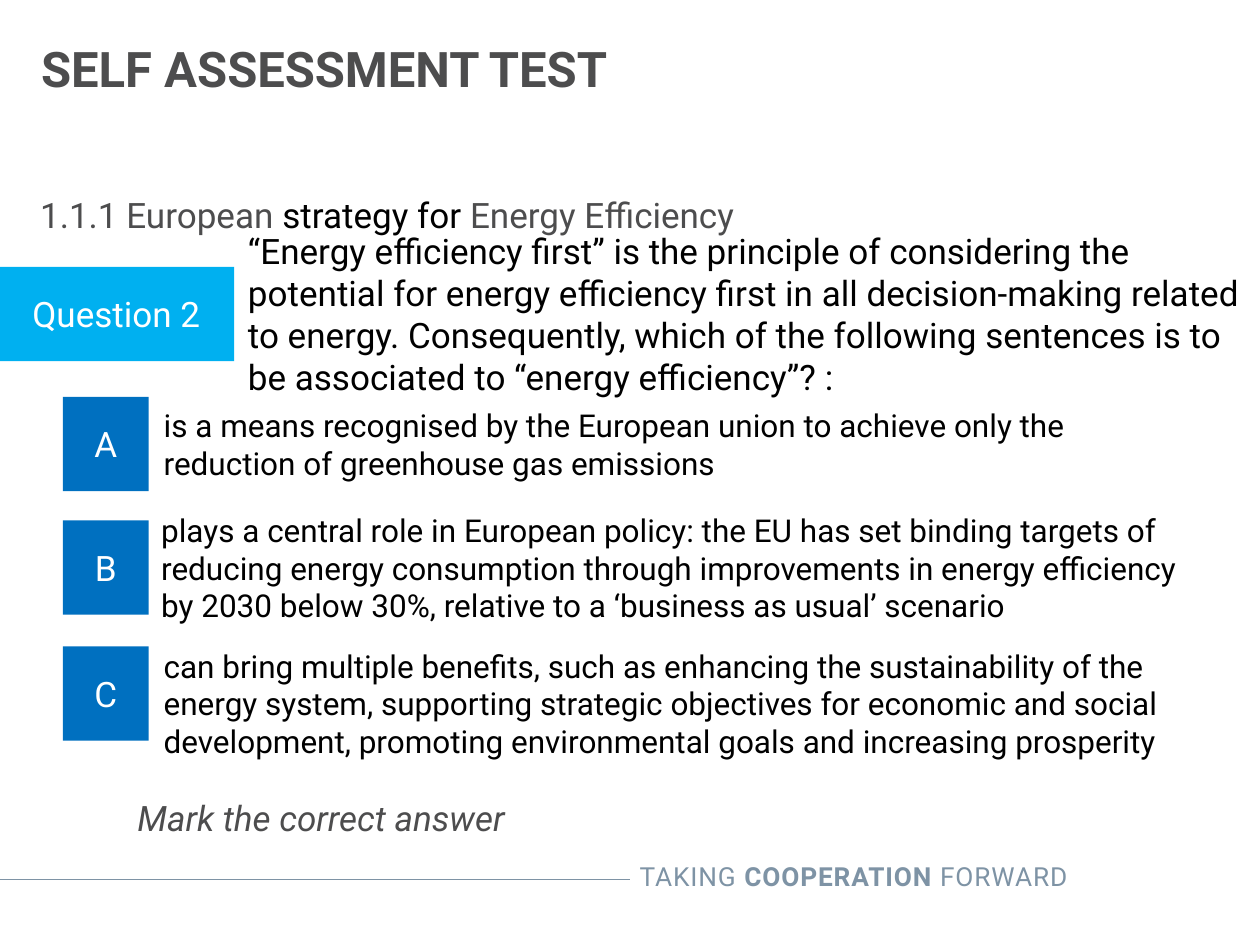
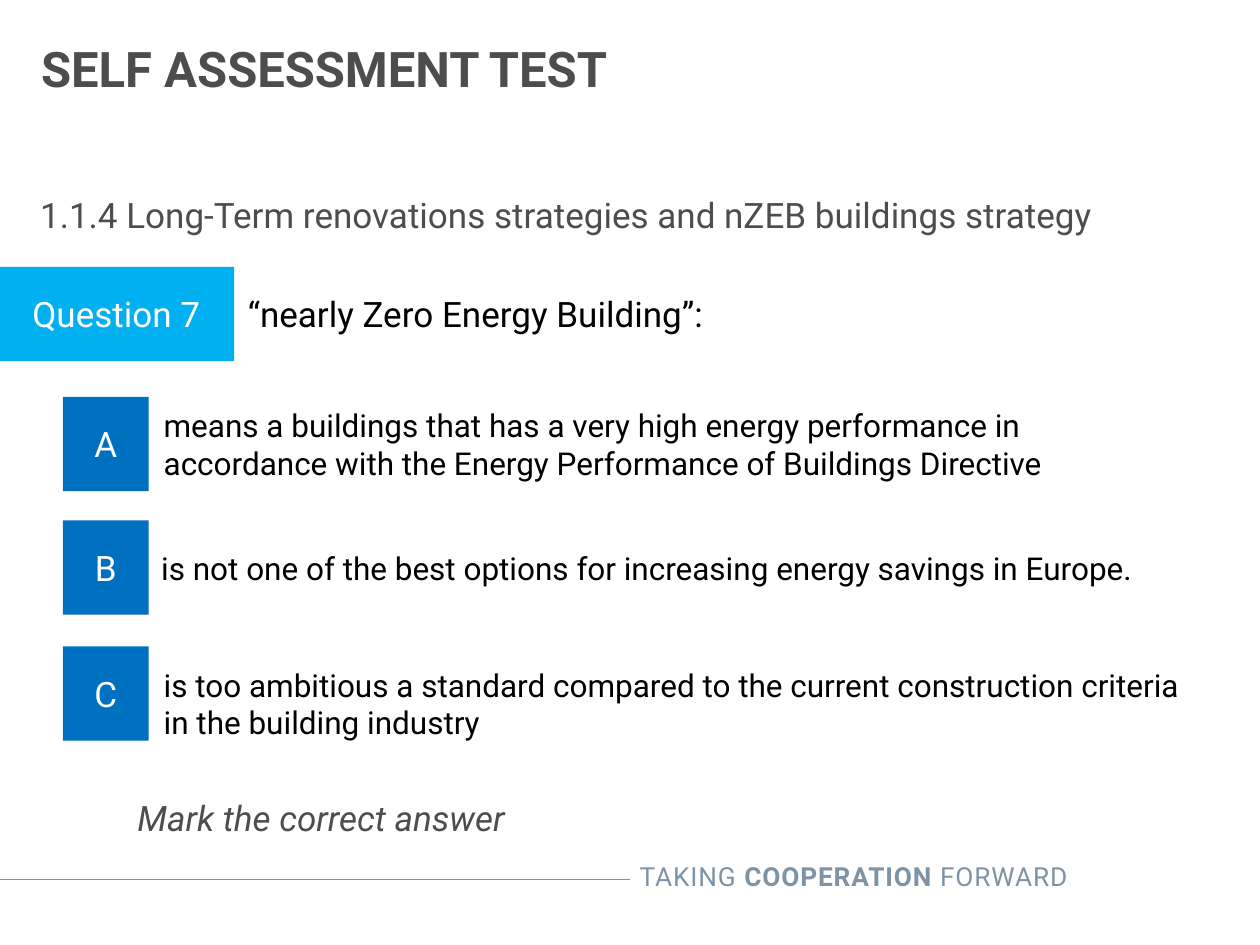
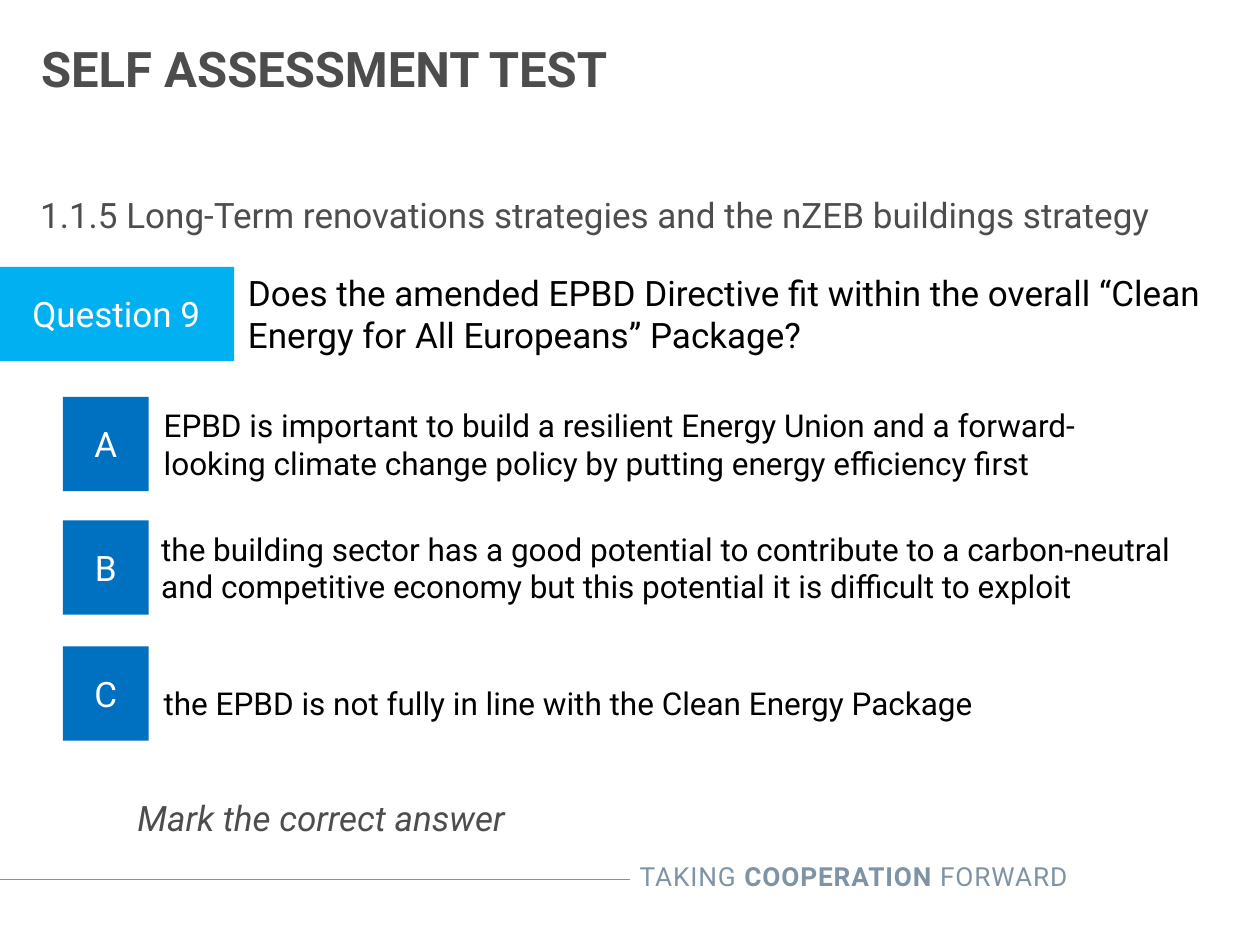
from dataclasses import dataclass
from typing import Any, Optional

import pptx
import pptx.dml.color
import pptx.enum.shapes
import pptx.enum.text
import pptx.oxml
import pptx.oxml.ns
import pptx.util
from pptx.dml.color import RGBColor
from pptx.util import Cm

ANCHOR = pptx.enum.text.MSO_ANCHOR
ALIGN = pptx.enum.text.PP_ALIGN

FONT = "Roboto"
BLACK = RGBColor(0x00, 0x00, 0x00)
WHITE = RGBColor(0xFF, 0xFF, 0xFF)
CHARCOAL = RGBColor(0x4D, 0x4D, 0x4E)
SLATE = RGBColor(0x7E, 0x93, 0xA5)
SKY = RGBColor(0x00, 0xB0, 0xF0)
BLUE = RGBColor(0x00, 0x70, 0xC0)


@dataclass(frozen=True)
class Area:
    left: float
    top: float
    width: float
    height: float = 1.9

    def lengths(self) -> tuple[Cm, Cm, Cm, Cm]:
        return Cm(self.left), Cm(self.top), Cm(self.width), Cm(self.height)


@dataclass(frozen=True)
class Words:
    text: str
    size: float = 20
    color: RGBColor = BLACK
    bold: bool = False
    italic: bool = False
    spacing: float = 0


@dataclass(frozen=True)
class Option:
    letter: str
    badge: Area
    answer: Area


@dataclass(frozen=True)
class Question:
    number: int
    topic: list[Words]
    wording: str
    answers: list[str]


EDGE = -0.03
TITLE = Area(EDGE, 0.41, 18.31)
TOPIC = Area(0.81, 3.91, 23.77, 0.86)
BANNER = Area(EDGE, 5.38, 4.75)
WORDING = Area(4.75, 5.38, 20.7)
INSTRUCTION = Area(2.77, 16.05, 15, 0.86)
SLOGAN = Area(9.86, 17.22, 11.91, 0.89)
FOOTER_RULE_END = 12.7
FOOTER_RULE_TOP = 17.73

OPTIONS = [
    Option("A", Area(1.27, 8, 1.73), Area(3.05, 8, 20.7)),
    Option("B", Area(1.27, 10.49, 1.73), Area(3, 10.49, 21.62)),
    Option("C", Area(1.27, 13.03, 1.73), Area(3.05, 13.23, 21.56)),
]

QUESTIONS = [
    Question(
        2,
        [
            Words("1.1.1 European ", color=CHARCOAL),
            Words("strategy for "),
            Words("Energy Efficiency", color=CHARCOAL),
        ],
        "“Energy efficiency first” is the principle of considering the potential for energy "
        "efficiency first in all decision-making related to energy. Consequently, which of the "
        "following sentences is to be associated to “energy efficiency”? :",
        [
            "is a means recognised by the European union to achieve only the reduction of "
            "greenhouse gas emissions",
            "plays a central role in European policy: the EU has set binding targets of reducing "
            "energy consumption through improvements in energy efficiency by 2030 below 30%, "
            "relative to a ‘business as usual’ scenario",
            "can bring multiple benefits, such as enhancing the sustainability of the energy "
            "system, supporting strategic objectives for economic and social development, "
            "promoting environmental goals and increasing prosperity",
        ],
    ),
    Question(
        7,
        [Words("1.1.4 Long-Term renovations strategies and nZEB buildings strategy", color=CHARCOAL)],
        "“nearly Zero Energy Building”:",
        [
            "means a buildings that has a very high energy performance in accordance with the "
            "Energy Performance of Buildings Directive",
            "is not one of the best options for increasing energy savings in Europe.",
            "is too ambitious a standard compared to the current construction criteria in the "
            "building industry",
        ],
    ),
    Question(
        9,
        [Words("1.1.5 Long-Term renovations strategies and the nZEB buildings strategy", color=CHARCOAL)],
        "Does the amended EPBD Directive fit within the overall “Clean Energy for All Europeans” "
        "Package?",
        [
            "EPBD is important to build a resilient Energy Union and a forward-looking climate "
            "change policy by putting energy efficiency first",
            "the building sector has a good potential to contribute to a carbon-neutral and "
            "competitive economy but this potential it is difficult to exploit",
            "the EPBD is not fully in line with the Clean Energy Package",
        ],
    ),
]


def write(frame: Any, words: list[Words], anchor: Any, align: Any) -> None:
    frame.word_wrap = True
    frame.vertical_anchor = anchor
    paragraph = frame.paragraphs[0]
    paragraph.alignment = align
    for part in words:
        run = paragraph.add_run()
        run.text = part.text
        run.font.name = FONT
        run.font.size = pptx.util.Pt(part.size)
        run.font.bold = part.bold
        run.font.italic = part.italic
        run.font.color.rgb = part.color
        if part.spacing:
            run.font._element.set("spc", str(round(part.spacing * 100)))


def add_text(
    slide: Any,
    area: Area,
    words: list[Words],
    anchor: Any = ANCHOR.MIDDLE,
    align: Any = ALIGN.LEFT,
    left_inset: Optional[float] = None,
    flush: bool = False,
) -> None:
    frame = slide.shapes.add_textbox(*area.lengths()).text_frame
    if flush:
        frame.margin_left = frame.margin_top = frame.margin_right = frame.margin_bottom = 0
    if left_inset is not None:
        frame.margin_left = Cm(left_inset)
    write(frame, words, anchor, align)


def add_block(slide: Any, area: Area, fill: RGBColor, label: str) -> None:
    block = slide.shapes.add_shape(pptx.enum.shapes.MSO_SHAPE.RECTANGLE, *area.lengths())
    block.shadow.inherit = False
    block.fill.solid()
    block.fill.fore_color.rgb = fill
    block.line.fill.background()
    write(block.text_frame, [Words(label, color=WHITE)], ANCHOR.MIDDLE, ALIGN.CENTER)


def add_footer(slide: Any) -> None:
    rule = slide.shapes.add_connector(
        pptx.enum.shapes.MSO_CONNECTOR.STRAIGHT,
        Cm(EDGE), Cm(FOOTER_RULE_TOP), Cm(FOOTER_RULE_END), Cm(FOOTER_RULE_TOP),
    )
    rule.line.color.rgb = SLATE
    rule.line.width = pptx.util.Pt(0.75)
    properties = rule._element.spPr
    properties.append(properties.makeelement(pptx.oxml.ns.qn("a:effectLst"), {}))
    slogan = [
        Words(text, 15, SLATE, bold, spacing=0.5)
        for text, bold in (("TAKING ", False), ("COOPERATION", True), (" FORWARD", False))
    ]
    add_text(slide, SLOGAN, slogan, ANCHOR.TOP, ALIGN.RIGHT)


def add_question(slide: Any, question: Question) -> None:
    add_footer(slide)
    add_text(slide, TITLE, [Words("SELF ASSESSMENT TEST", 28, CHARCOAL, bold=True)], left_inset=0.86)
    add_text(slide, TOPIC, question.topic, ANCHOR.TOP, flush=True)
    add_block(slide, BANNER, SKY, f"Question {question.number}")
    add_text(slide, WORDING, [Words(question.wording)])
    for option, answer in zip(OPTIONS, question.answers):
        add_block(slide, option.badge, BLUE, option.letter)
        add_text(slide, option.answer, [Words(answer, 18)])
    instruction = Words("Mark the correct answer", color=CHARCOAL, italic=True)
    add_text(slide, INSTRUCTION, [instruction], ANCHOR.TOP, flush=True)


def main() -> None:
    deck = pptx.Presentation()
    deck.slide_width = Cm(25.4)
    deck.slide_height = Cm(19.05)
    for question in QUESTIONS:
        add_question(deck.slides.add_slide(deck.slide_layouts[6]), question)
    deck.save("out.pptx")


if __name__ == "__main__":
    main()
